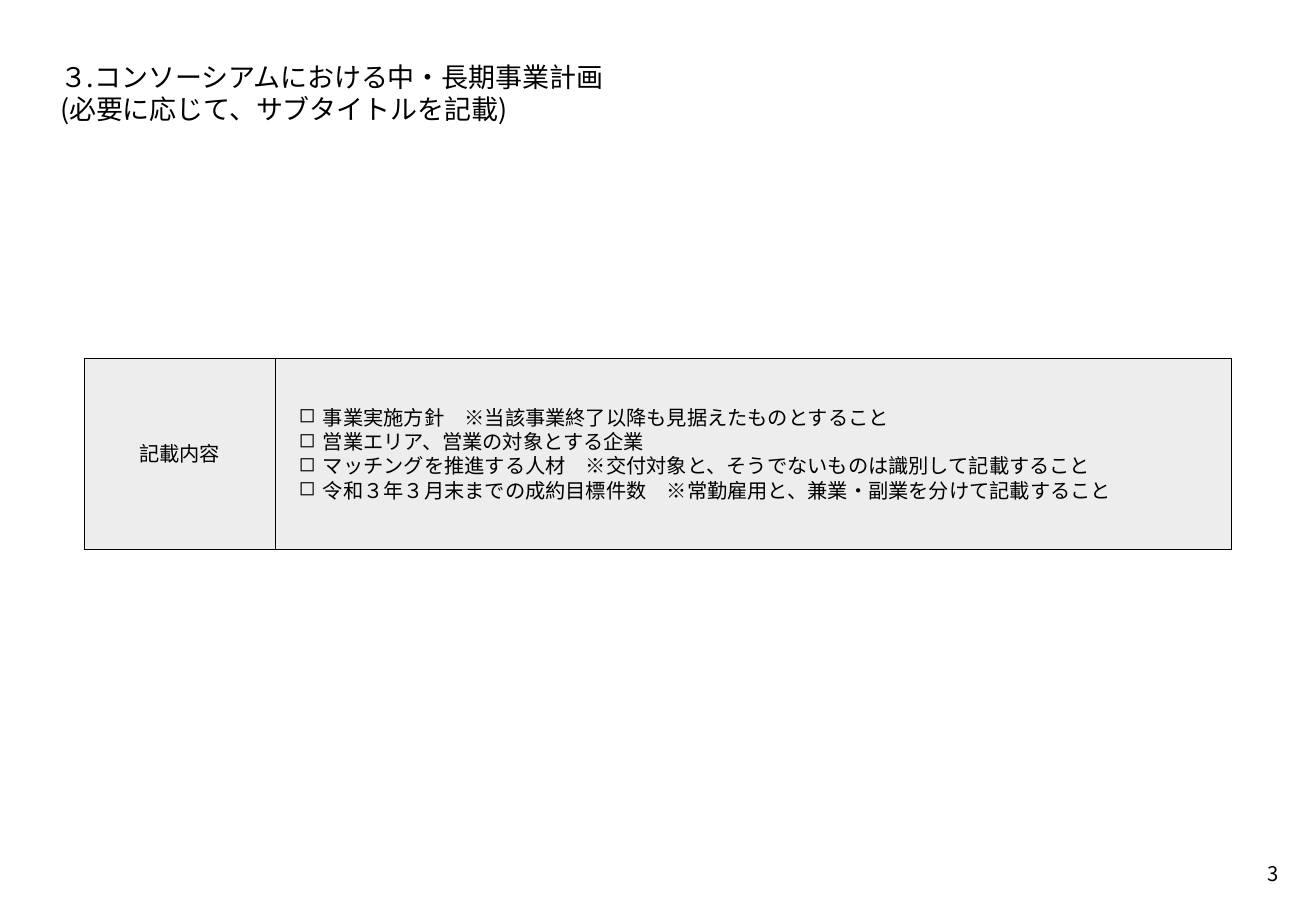
import pptx
import pptx.util
import pptx.dml.color
import pptx.enum.dml
import pptx.enum.shapes
import pptx.enum.text
import pptx.oxml.ns
import lxml.etree

TITLE = ["３.コンソーシアムにおける中・長期事業計画\v(必要に応じて、サブタイトルを記載)"]
LABEL = ["記載内容"]
ITEMS = [
    "事業実施方針　※当該事業終了以降も見据えたものとすること",
    "営業エリア、営業の対象とする企業",
    "マッチングを推進する人材　※交付対象と、そうでないものは識別して記載すること",
    "令和３年３月末までの成約目標件数　※常勤雇用と、兼業・副業を分けて記載すること",
]
PAGE = ["3"]
FONT = "Noto Sans CJK JP"
WIDTH, HEIGHT = 1316, 911
MARGIN = 36
BOX_LEFT, BOX_TOP, BOX_SIZE, ITEMS_WIDTH = 84, 358, 191, 956
PAGE_SIZE = 47
ALIGN = pptx.enum.text.PP_ALIGN
ANCHOR = pptx.enum.text.MSO_ANCHOR


def px(n):
    return pptx.util.Emu(n * 7526)


def color(hex_code):
    return pptx.dml.color.RGBColor.from_string(hex_code)


def add_bullet(p, char, indent):
    pPr = p._p.get_or_add_pPr()
    pPr.set("marL", str(px(indent)))
    pPr.set("indent", str(-px(indent)))
    lxml.etree.SubElement(pPr, pptx.oxml.ns.qn("a:buChar"), char=char)


def write(sp, lines, size=12, align=ALIGN.LEFT, anchor=ANCHOR.TOP,
          inset=24, wrap=True, bullet=None):
    tf = sp.text_frame
    tf.word_wrap = wrap
    tf.vertical_anchor = anchor
    tf.margin_left = tf.margin_right = px(inset)
    tf.margin_top = tf.margin_bottom = px(inset)
    for i, line in enumerate(lines):
        p = tf.add_paragraph() if i else tf.paragraphs[0]
        p.text = line
        p.alignment = align
        p.line_spacing = pptx.util.Pt(size * 1.2)
        if bullet:
            add_bullet(p, bullet, 24)
        for r in p.runs:
            r.font.size = pptx.util.Pt(size)
            r.font.color.rgb = color("000000")
            r.font.name = FONT
            lxml.etree.SubElement(r.font._element, pptx.oxml.ns.qn("a:ea"), typeface=FONT)


def add_box(left, width):
    sp = s.shapes.add_shape(pptx.enum.shapes.MSO_SHAPE.RECTANGLE,
                            px(left), px(BOX_TOP), px(width), px(BOX_SIZE))
    sp.shadow.inherit = False
    sp.fill.solid()
    sp.fill.fore_color.rgb = color("EDEDED")
    sp.line.color.rgb = color("000000")
    sp.line.width = pptx.util.Pt(0.25)
    sp.line.dash_style = pptx.enum.dml.MSO_LINE.ROUND_DOT
    return sp


prs = pptx.Presentation()
prs.slide_width, prs.slide_height = px(WIDTH), px(HEIGHT)
s = prs.slides.add_slide(prs.slide_layouts[6])

title = s.shapes.add_textbox(px(MARGIN), px(MARGIN), px(WIDTH - 2 * MARGIN), px(96))
write(title, TITLE, size=16)

page = s.shapes.add_textbox(px(1244), px(849), px(PAGE_SIZE), px(PAGE_SIZE))
write(page, PAGE, align=ALIGN.RIGHT, inset=12, wrap=False)

items = add_box(BOX_LEFT + BOX_SIZE, ITEMS_WIDTH)
write(items, ITEMS, anchor=ANCHOR.MIDDLE, bullet="◻")

label = add_box(BOX_LEFT, BOX_SIZE)
write(label, LABEL, align=ALIGN.CENTER, anchor=ANCHOR.MIDDLE, inset=12)

prs.save("out.pptx")
